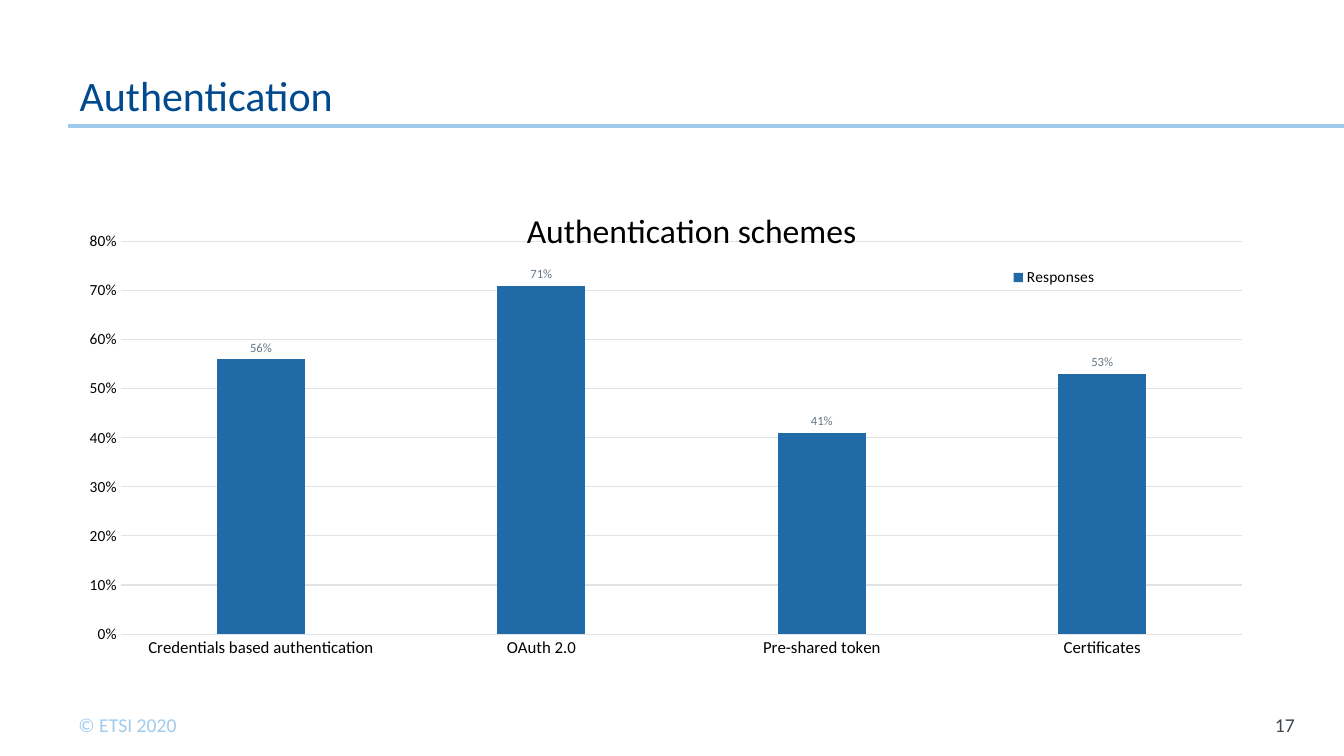
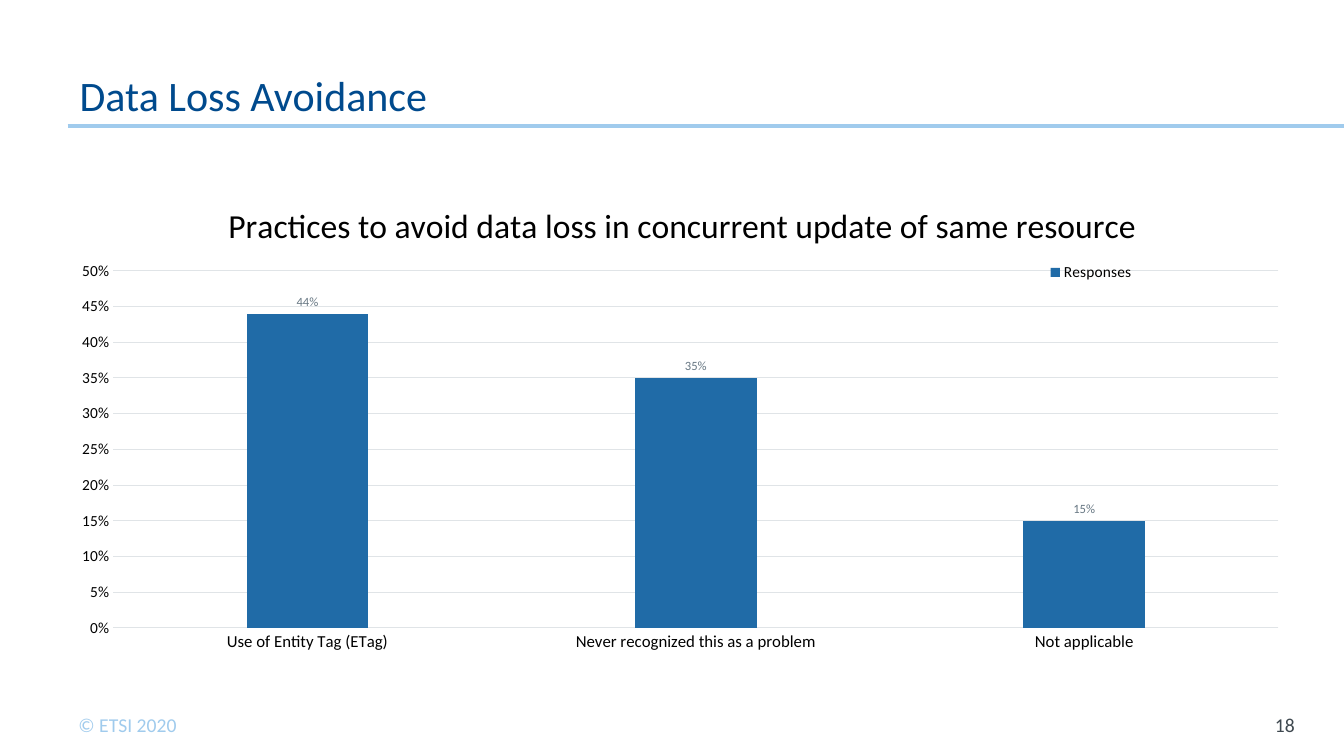
from lxml import etree
from pptx import Presentation, util as u
from pptx.chart.data import CategoryChartData
from pptx.dml.color import RGBColor
from pptx.enum import chart as ch, shapes, text
from pptx.oxml.ns import qn

BLACK = RGBColor(0, 0, 0)
NAVY = RGBColor(0x00, 0x4A, 0x8D)
SKY = RGBColor(0xA0, 0xCB, 0xED)
SLATE = RGBColor(0x3E, 0x48, 0x4F)
LABEL_GREY = RGBColor(0x67, 0x77, 0x83)
GRID_GREY = RGBColor(0xE0, 0xE4, 0xE7)
BAR_BLUE = RGBColor(0x20, 0x6B, 0xA7)

FONT = "Calibri"
WIDTH, HEIGHT = 13.33, 7.5
MARGIN = 0.67
RULE_Y = 1.25
FOOTER = "© ETSI 2020"
FIRST_NUMBER = 17

SURVEY = [
    dict(
        heading="Authentication",
        question="Authentication schemes",
        answers={"Credentials based authentication": 0.56, "OAuth 2.0": 0.71,
                 "Pre-shared token": 0.41, "Certificates": 0.53},
        top=0.8, step=0.1,
        plot_area=(0.043, 0.126, 0.906, 0.761),
        question_at=(0.366, 0.05), legend_at=(0.76, 0.17),
    ),
    dict(
        heading="Data Loss Avoidance",
        question="Practices to avoid data loss in concurrent update of same resource",
        answers={"Use of Entity Tag (ETag)": 0.44,
                 "Never recognized this as a problem": 0.35, "Not applicable": 0.15},
        top=0.5, step=0.05,
        plot_area=(0.037, 0.183, 0.941, 0.692),
        question_at=(0.125, 0.04), legend_at=(0.79, 0.16),
    ),
]


def style(font, size, color):
    font.name, font.size, font.bold = FONT, u.Pt(size), False
    font.color.rgb = color


def add_text(slide, words, box, size=14, color=SLATE, align=text.PP_ALIGN.LEFT,
             anchor=text.MSO_ANCHOR.TOP, insets=(0.1, 0.05, 0.1, 0.05), spacing=None):
    frame = slide.shapes.add_textbox(*map(u.Inches, box)).text_frame
    frame.word_wrap = True
    frame.vertical_anchor = anchor
    (frame.margin_left, frame.margin_top,
     frame.margin_right, frame.margin_bottom) = map(u.Inches, insets)
    paragraph = frame.paragraphs[0]
    paragraph.text = words
    paragraph.alignment = align
    if spacing:
        paragraph.line_spacing = u.Pt(spacing)
    style(paragraph.font, size, color)


def place(part, index, position, inner=False):
    for old in part.findall(qn("c:layout")):
        part.remove(old)
    layout = etree.Element(qn("c:layout"))
    manual = etree.SubElement(layout, qn("c:manualLayout"))
    settings = [("layoutTarget", "inner")] if inner else []
    settings += [("xMode", "edge"), ("yMode", "edge"), *zip("xywh", position)]
    for tag, value in settings:
        etree.SubElement(manual, qn(f"c:{tag}")).set("val", str(value))
    part.insert(index, layout)


def add_frame(slide, heading, number):
    rule = slide.shapes.add_connector(
        shapes.MSO_CONNECTOR.STRAIGHT, u.Inches(MARGIN), u.Inches(RULE_Y),
        u.Inches(WIDTH), u.Inches(RULE_Y))
    rule.line.color.rgb = SKY
    rule.line.width = u.Pt(2.25)
    etree.SubElement(rule._element.spPr, qn("a:effectLst"))
    add_text(slide, FOOTER, (0.68, 7.02, 1.34, 0.34), color=SKY)
    add_text(slide, str(number), (12.25, 6.99, 0.69, 0.4), align=text.PP_ALIGN.RIGHT,
             anchor=text.MSO_ANCHOR.MIDDLE, insets=(0, 0.05, 0.1, 0.05))
    add_text(slide, heading, (MARGIN, 0.3, 10.42, 0.95), size=30, color=NAVY,
             anchor=text.MSO_ANCHOR.BOTTOM, insets=(0.12, 0.06, 0.12, 0.06), spacing=30)


def add_responses(slide, topic):
    data = CategoryChartData(number_format="0%")
    data.categories = list(topic["answers"])
    data.add_series("Responses", list(topic["answers"].values()))
    chart = slide.shapes.add_chart(
        ch.XL_CHART_TYPE.COLUMN_CLUSTERED,
        *map(u.Inches, (MARGIN, 1.75, 12.28, 5.12)), data).chart
    style(chart.font, 10, SLATE)

    chart.has_title = True
    question = chart.chart_title.text_frame.paragraphs[0]
    question.text = topic["question"]
    style(question.runs[0].font, 24, BLACK)
    place(chart.chart_title._element, 1, topic["question_at"])

    chart.has_legend = True
    chart.legend.position = ch.XL_LEGEND_POSITION.RIGHT
    chart.legend.include_in_layout = False
    style(chart.legend.font, 11, BLACK)
    place(chart.legend._element, 1, topic["legend_at"])
    place(chart._chartSpace.chart.plotArea, 0, topic["plot_area"], inner=True)

    answers, shares = chart.category_axis, chart.value_axis
    for axis, size in ((answers, 12), (shares, 11)):
        axis.major_tick_mark = axis.minor_tick_mark = ch.XL_TICK_MARK.NONE
        style(axis.tick_labels.font, size, BLACK)
    shares.minimum_scale, shares.maximum_scale = 0, topic["top"]
    shares.major_unit = topic["step"]
    shares.tick_labels.number_format = "0%"
    shares.tick_labels.number_format_is_linked = False
    shares.format.line.fill.background()
    shares.has_major_gridlines = True
    for line in (answers.format.line, shares.major_gridlines.format.line):
        line.color.rgb = GRID_GREY
        line.width = u.Pt(0.75)

    plot = chart.plots[0]
    plot.gap_width, plot.overlap = 219, -27
    plot.vary_by_categories = False
    bars = plot.series[0]
    bars.format.fill.solid()
    bars.format.fill.fore_color.rgb = BAR_BLUE
    labels = bars.data_labels
    labels.show_value = True
    labels.position = ch.XL_LABEL_POSITION.OUTSIDE_END
    labels.number_format, labels.number_format_is_linked = "0%", False
    style(labels.font, 9, LABEL_GREY)


def main():
    deck = Presentation()
    deck.slide_width, deck.slide_height = u.Inches(WIDTH), u.Inches(HEIGHT)
    for number, topic in enumerate(SURVEY, FIRST_NUMBER):
        slide = deck.slides.add_slide(deck.slide_layouts[6])
        add_frame(slide, topic["heading"], number)
        add_responses(slide, topic)
    deck.save("out.pptx")


if __name__ == "__main__":
    main()
